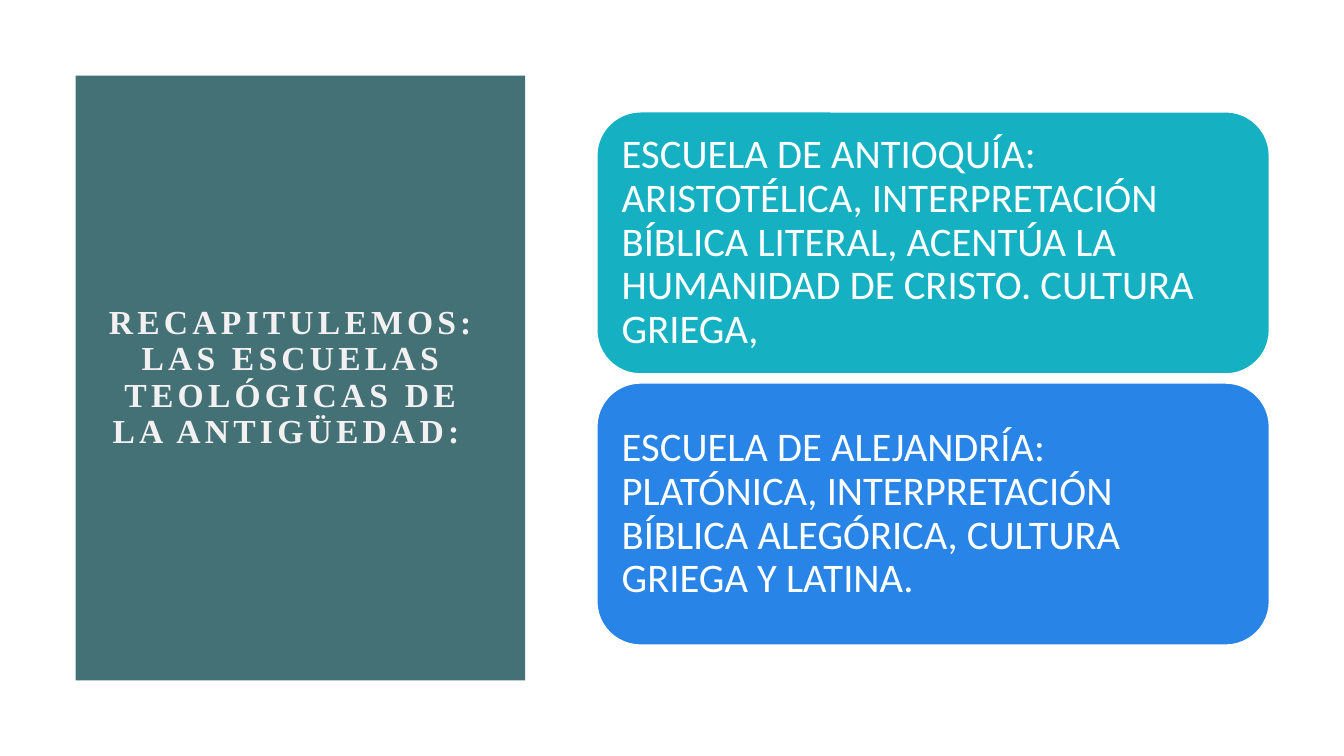
"""Build a slide summing up the theological schools of antiquity."""
from pptx import Presentation
from pptx.dml.color import RGBColor
from pptx.enum.shapes import MSO_SHAPE
from pptx.enum.text import MSO_ANCHOR, PP_ALIGN
from pptx.util import Inches, Pt

TITLE = "RECAPITULEMOS: LAS ESCUELAS TEOLÓGICAS DE LA ANTIGÜEDAD: "
SCHOOLS = [
    ("ESCUELA DE ANTIOQUÍA: ARISTOTÉLICA, INTERPRETACIÓN BÍBLICA LITERAL, "
     "ACENTÚA LA HUMANIDAD DE CRISTO. CULTURA GRIEGA,", "15B1C3"),
    ("ESCUELA DE ALEJANDRÍA: PLATÓNICA, INTERPRETACIÓN BÍBLICA ALEGÓRICA, "
     "CULTURA GRIEGA Y LATINA.", "2984E7"),
]
THEME = {
    "panel": "437176", "title": "F3F0F1", "white": "FFFFFF",
    "title_font": "Times New Roman", "body_font": "Calibri",
    "title_size": 24, "body_size": 29, "title_spacing": 3,
}
PANEL = (0.75, 0.75, 4.46, 6)
TITLE_BOX = (0.93, 1.5, 3.94, 4.5)
CARD_LEFT, CARD_TOP, CARD_W, CARD_H, CARD_GAP = 5.92, 1.11, 6.67, 2.6, 0.09
CARD_INSET = 0.12


def add_block(slide, kind, box, fill, line=None):
    sp = slide.shapes.add_shape(kind, *map(Inches, box))
    sp.shadow.inherit = False
    sp.fill.solid()
    sp.fill.fore_color.rgb = RGBColor.from_string(fill)
    if line:
        sp.line.color.rgb = RGBColor.from_string(line)
        sp.line.width = Pt(1)
    else:
        sp.line.fill.background()
    return sp


def write(sp, text, font, size, color, align, bold=False):
    tf = sp.text_frame
    tf.word_wrap = True
    tf.vertical_anchor = MSO_ANCHOR.MIDDLE
    tf.text = text
    p = tf.paragraphs[0]
    p.alignment = align
    p.line_spacing = 0.9
    r = p.runs[0]
    r.font.name = font
    r.font.size = Pt(size)
    r.font.bold = bold
    r.font.color.rgb = RGBColor.from_string(color)
    return r


def main():
    prs = Presentation()
    prs.slide_width, prs.slide_height = Inches(13.33), Inches(7.5)
    s = prs.slides.add_slide(prs.slide_layouts[6])

    add_block(s, MSO_SHAPE.RECTANGLE, PANEL, THEME["panel"])
    title = s.shapes.add_textbox(*map(Inches, TITLE_BOX))
    r = write(title, TITLE, THEME["title_font"], THEME["title_size"],
              THEME["title"], PP_ALIGN.CENTER, bold=True)
    r.font._element.set("spc", str(THEME["title_spacing"] * 100))

    for i, (text, fill) in enumerate(SCHOOLS):
        top = CARD_TOP + i * (CARD_H + CARD_GAP)
        card = add_block(s, MSO_SHAPE.ROUNDED_RECTANGLE,
                         (CARD_LEFT, top, CARD_W, CARD_H), fill, THEME["white"])
        tf = card.text_frame
        tf.margin_left = tf.margin_right = Inches(CARD_INSET)
        tf.margin_top = tf.margin_bottom = Inches(CARD_INSET)
        write(card, text, THEME["body_font"], THEME["body_size"],
              THEME["white"], PP_ALIGN.LEFT)

    prs.save("out.pptx")


if __name__ == "__main__":
    main()
